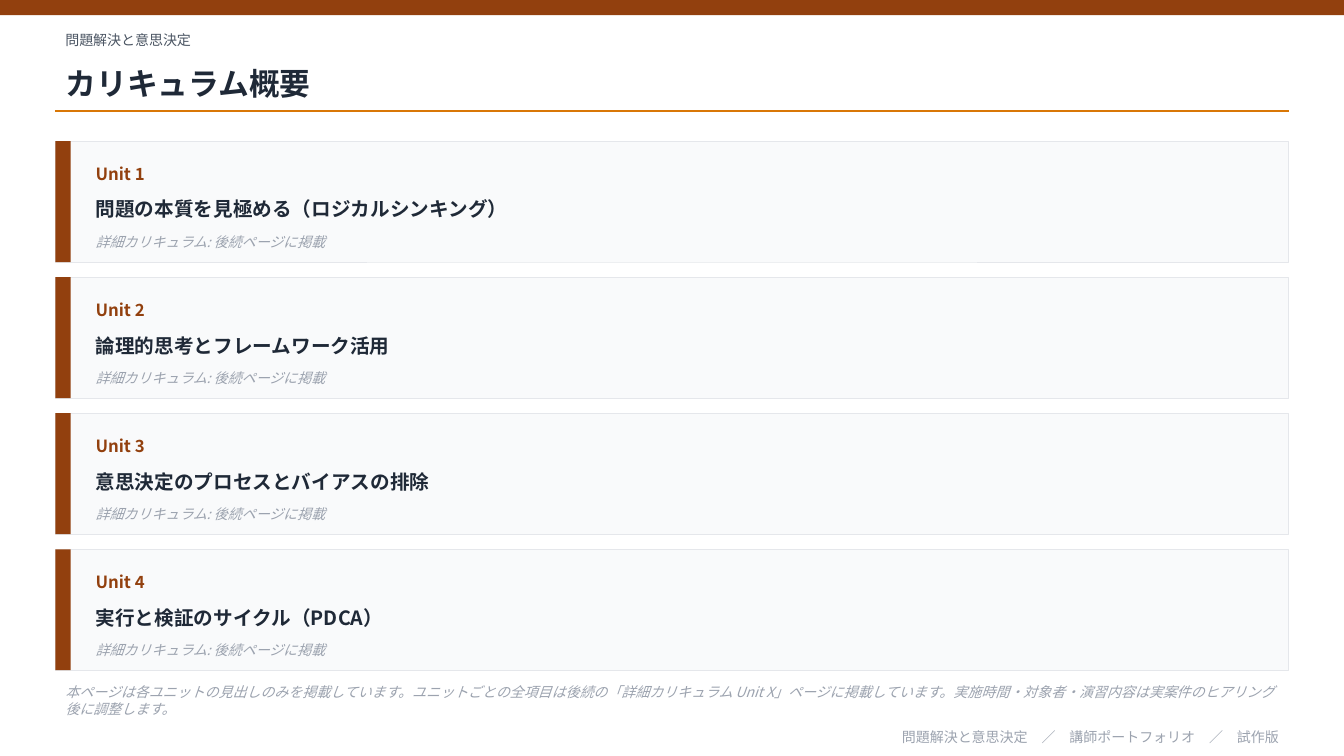
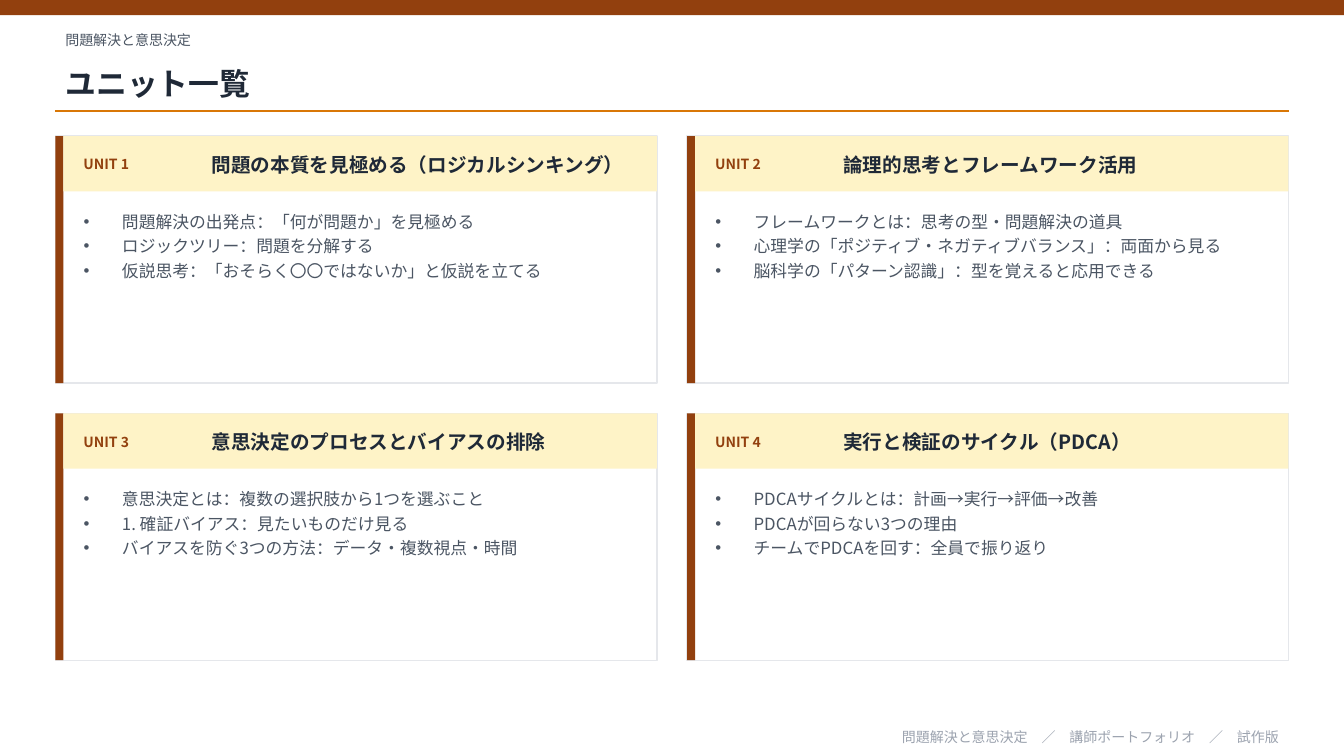
from lxml import etree
from pptx import Presentation
from pptx import util as u
from pptx.dml.color import RGBColor
from pptx.enum import shapes, text
from pptx.oxml import ns

FONT = "Noto Sans CJK JP"
BROWN = RGBColor(0x92, 0x40, 0x0E)
AMBER = RGBColor(0xD9, 0x77, 0x06)
CREAM = RGBColor(0xFE, 0xF3, 0xC7)
INK = RGBColor(0x1F, 0x29, 0x37)
SLATE = RGBColor(0x4B, 0x55, 0x63)
MUTED = RGBColor(0x9C, 0xA3, 0xAF)
BORDER = RGBColor(0xE5, 0xE7, 0xEB)
PALE = RGBColor(0xF9, 0xFA, 0xFB)
WHITE = RGBColor(0xFF, 0xFF, 0xFF)

COURSE = "問題解決と意思決定"
FOOTER = "　／　".join([COURSE, "講師ポートフォリオ", "試作版"])
OVERVIEW_TITLE = "カリキュラム概要"
UNITS_TITLE = "ユニット一覧"
DETAIL = "詳細カリキュラム: 後続ページに掲載"
NOTICE = (
    "本ページは各ユニットの見出しのみを掲載しています。"
    "ユニットごとの全項目は後続の「詳細カリキュラム Unit X」ページに掲載しています。"
    "実施時間・対象者・演習内容は実案件のヒアリング後に調整します。"
)
UNITS = [
    ("問題の本質を見極める（ロジカルシンキング）", [
        "問題解決の出発点：「何が問題か」を見極める",
        "ロジックツリー：問題を分解する",
        "仮説思考：「おそらく〇〇ではないか」と仮説を立てる",
    ]),
    ("論理的思考とフレームワーク活用", [
        "フレームワークとは：思考の型・問題解決の道具",
        "心理学の「ポジティブ・ネガティブバランス」：両面から見る",
        "脳科学の「パターン認識」：型を覚えると応用できる",
    ]),
    ("意思決定のプロセスとバイアスの排除", [
        "意思決定とは：複数の選択肢から1つを選ぶこと",
        "1. 確証バイアス：見たいものだけ見る",
        "バイアスを防ぐ3つの方法：データ・複数視点・時間",
    ]),
    ("実行と検証のサイクル（PDCA）", [
        "PDCAサイクルとは：計画→実行→評価→改善",
        "PDCAが回らない3つの理由",
        "チームでPDCAを回す：全員で振り返り",
    ]),
]

WIDTH, HEIGHT = 13.33, 7.5
MARGIN = 0.55
CONTENT = WIDTH - 2 * MARGIN
TITLE_ONLY, FOUR_BODIES = 5, 4


def inches(*lengths):
    return [u.Inches(length) for length in lengths]


def add_run(paragraph, words, size, color, bold=False, italic=False):
    run = paragraph.add_run()
    run.text = words
    font = run.font
    font.size, font.bold, font.italic = u.Pt(size), bold, italic
    font.color.rgb = color
    font.name = FONT
    latin = run._r.rPr.find(ns.qn("a:latin"))
    latin.addnext(latin.makeelement(ns.qn("a:ea"), {"typeface": FONT}))


def set_frame(shape, anchor):
    frame = shape.text_frame
    frame.word_wrap = True
    frame.auto_size = text.MSO_AUTO_SIZE.NONE
    frame.vertical_anchor = anchor
    return frame


def write(shape, words, size, color, align=text.PP_ALIGN.LEFT, **style):
    paragraph = set_frame(shape, text.MSO_ANCHOR.MIDDLE).paragraphs[0]
    paragraph.alignment = align
    add_run(paragraph, words, size, color, **style)


def label(slide, box, words, size, color, **style):
    write(slide.shapes.add_textbox(*inches(*box)), words, size, color, **style)


def panel(slide, box, fill, border=None):
    shape = slide.shapes.add_shape(shapes.MSO_SHAPE.RECTANGLE, *inches(*box))
    shape.shadow.inherit = False
    shape.fill.solid()
    shape.fill.fore_color.rgb = fill
    if border:
        shape.line.color.rgb = BORDER
        shape.line.width = u.Pt(border)
    else:
        shape.line.fill.background()


def place(placeholder, box):
    (placeholder.left, placeholder.top,
     placeholder.width, placeholder.height) = inches(*box)


def start_slide(deck, layout, title):
    slide = deck.slides.add_slide(deck.slide_layouts[layout])
    slide.background.fill.solid()
    slide.background.fill.fore_color.rgb = WHITE
    panel(slide, (0, 0, WIDTH, 0.15), BROWN)
    label(slide, (MARGIN, 0.25, CONTENT, 0.3), COURSE, 10, SLATE)
    place(slide.shapes.title, (MARGIN, 0.55, CONTENT, 0.55))
    write(slide.shapes.title, title, 22, INK, bold=True)
    rule = slide.shapes.add_connector(
        shapes.MSO_CONNECTOR.STRAIGHT,
        *inches(MARGIN, 1.1, MARGIN + CONTENT, 1.1))
    rule.line.color.rgb = AMBER
    rule.line.width = u.Pt(1)
    etree.SubElement(rule._element.spPr, ns.qn("a:effectLst"))
    label(slide, (MARGIN, 7.2, CONTENT, 0.22), FOOTER, 10, MUTED,
          align=text.PP_ALIGN.RIGHT)
    return slide


def fill_list(placeholder, box, topics):
    place(placeholder, box)
    placeholder._element.getparent().append(placeholder._element)
    frame = set_frame(placeholder, text.MSO_ANCHOR.TOP)
    for index, topic in enumerate(topics):
        paragraph = frame.add_paragraph() if index else frame.paragraphs[0]
        props = paragraph._p.get_or_add_pPr()
        hang = u.Inches(0.38)
        props.set("marL", str(hang))
        props.set("indent", str(-hang))
        etree.SubElement(props, ns.qn("a:buChar"), char="•")
        paragraph.space_before, paragraph.space_after = u.Pt(0), u.Pt(3)
        add_run(paragraph, topic, 12, SLATE)


def build_overview(deck):
    slide = start_slide(deck, TITLE_ONLY, OVERVIEW_TITLE)
    row, gap, left = 1.2, 0.15, MARGIN + 0.3
    inner = CONTENT - 0.5
    for index, (heading, _) in enumerate(UNITS):
        top = 1.4 + index * (row + gap)
        panel(slide, (MARGIN, top, CONTENT, row), PALE, border=0.5)
        panel(slide, (MARGIN, top, 0.15, row), BROWN)
        label(slide, (left, top + 0.12, 1.5, 0.4), f"Unit {index + 1}",
              12, BROWN, bold=True)
        label(slide, (left, top + 0.45, inner, 0.45), heading, 14, INK, bold=True)
        label(slide, (left, top + 0.85, inner, 0.3), DETAIL, 10, MUTED, italic=True)
    label(slide, (MARGIN, 6.75, CONTENT, 0.4), NOTICE, 10, MUTED, italic=True)


def build_units(deck):
    slide = start_slide(deck, FOUR_BODIES, UNITS_TITLE)
    bodies = [p for p in slide.placeholders if p.placeholder_format.idx > 0]
    gap, stripe, card_height = 0.3, 0.08, 2.45
    card_width = (CONTENT - gap) / 2
    for index, (heading, topics) in enumerate(UNITS):
        row, column = divmod(index, 2)
        left = MARGIN + column * (card_width + gap)
        top = 1.35 + row * (card_height + gap)
        inset = left + stripe + 0.1
        panel(slide, (left, top, card_width, card_height), WHITE, border=1)
        panel(slide, (left, top, stripe, card_height), BROWN)
        panel(slide, (left + stripe, top, card_width - stripe, 0.55), CREAM)
        label(slide, (inset, top + 0.08, 1.2, 0.4), f"UNIT {index + 1}",
              10, BROWN, bold=True)
        label(slide, (left + 1.45, top + 0.08, card_width - 1.6, 0.4), heading,
              14, INK, bold=True)
        fill_list(bodies[index], (inset, top + 0.7, card_width - 0.36, 1.6), topics)


def main():
    deck = Presentation()
    deck.slide_width, deck.slide_height = inches(WIDTH, HEIGHT)
    build_overview(deck)
    build_units(deck)
    deck.save("out.pptx")


if __name__ == "__main__":
    main()
